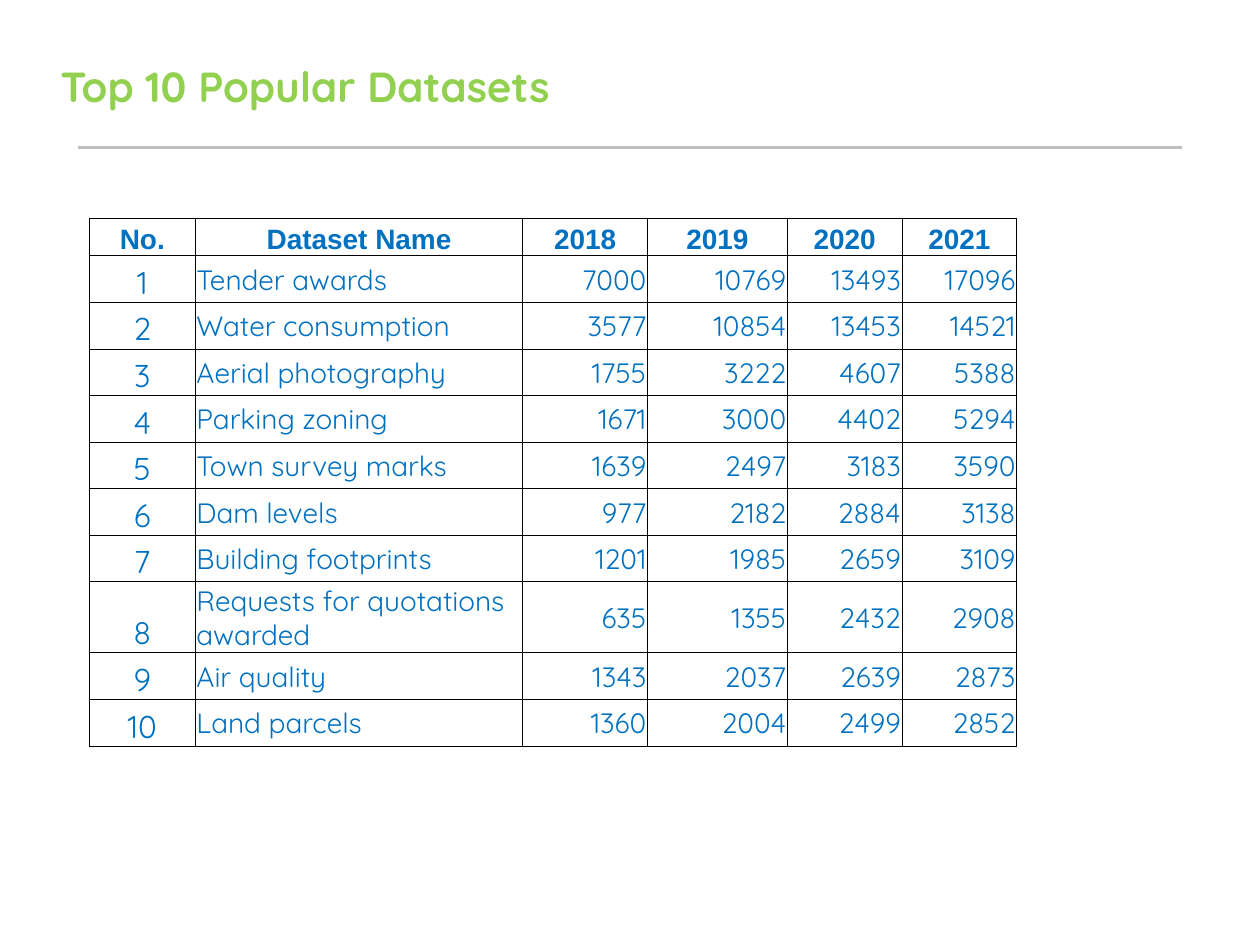
from lxml import etree
from pptx import Presentation
from pptx import util as u
from pptx.dml.color import RGBColor
from pptx.enum import shapes, text
from pptx.oxml import ns

HEAD = ["No.", "Dataset Name", "2018", "2019", "2020", "2021"]
DATA = [
    ("Tender awards", 7000, 10769, 13493, 17096),
    ("Water consumption", 3577, 10854, 13453, 14521),
    ("Aerial photography", 1755, 3222, 4607, 5388),
    ("Parking zoning", 1671, 3000, 4402, 5294),
    ("Town survey marks", 1639, 2497, 3183, 3590),
    ("Dam levels", 977, 2182, 2884, 3138),
    ("Building footprints", 1201, 1985, 2659, 3109),
    ("Requests for quotations awarded", 635, 1355, 2432, 2908),
    ("Air quality", 1343, 2037, 2639, 2873),
    ("Land parcels", 1360, 2004, 2499, 2852),
]
WIDTHS = [0.84, 2.6, 0.99, 1.11, 0.91, 0.91]
LEFT, CENTER, RIGHT = (
    text.PP_ALIGN.LEFT, text.PP_ALIGN.CENTER, text.PP_ALIGN.RIGHT)
MIDDLE, BOTTOM = text.MSO_ANCHOR.MIDDLE, text.MSO_ANCHOR.BOTTOM


def color(code):
    return RGBColor.from_string(code)


def write(frame, words, size=16, font="Quicksand", ink="0070C0",
          bold=False, align=LEFT):
    para = frame.paragraphs[0]
    para.alignment = align
    run = para.add_run()
    run.text = words
    run.font.size = u.Pt(size)
    run.font.name = font
    run.font.bold = bold
    run.font.color.rgb = color(ink)


def border(cell, ink="000000", width=0.5):
    props = cell._tc.get_or_add_tcPr()
    for side in ("a:lnL", "a:lnR", "a:lnT", "a:lnB"):
        line = etree.SubElement(props, ns.qn(side), w=str(u.Pt(width)))
        fill = etree.SubElement(line, ns.qn("a:solidFill"))
        etree.SubElement(fill, ns.qn("a:srgbClr"), val=ink)


class Deck:
    def __init__(self):
        self.file = Presentation()
        self.file.slide_width = u.Inches(10)
        self.file.slide_height = u.Inches(7.5)
        self.slide = self.file.slides.add_slide(self.file.slide_layouts[5])

    def title(self, words, x, y, w, h):
        box = self.slide.shapes.title
        box.left, box.top, box.width, box.height = map(
            u.Inches, (x, y, w, h))
        box.text_frame.vertical_anchor = MIDDLE
        write(box.text_frame, words, size=24, ink="92D050", bold=True)

    def rule(self, x, y, end, ink="BFBFBF", width=2):
        line = self.slide.shapes.add_connector(
            shapes.MSO_CONNECTOR.STRAIGHT, *map(u.Inches, (x, y, end, y)))
        line.line.color.rgb = color(ink)
        line.line.width = u.Pt(width)
        etree.SubElement(line._element.spPr, ns.qn("a:effectLst"))

    def cell(self, cell, words, anchor, **style):
        cell.margin_left = cell.margin_right = u.Inches(0.01)
        cell.margin_top, cell.margin_bottom = u.Inches(0.01), 0
        cell.vertical_anchor = anchor
        border(cell)
        cell.fill.solid()
        cell.fill.fore_color.rgb = color("FFFFFF")
        write(cell.text_frame, words, **style)

    def table(self, x, y, head, data, widths, top=0.3, high=0.37):
        size = (sum(widths), top + high * len(data))
        grid = self.slide.shapes.add_table(
            len(data) + 1, len(head), *map(u.Inches, (x, y, *size))).table
        for col, width in zip(grid.columns, widths):
            col.width = u.Inches(width)
        for i, row in enumerate(grid.rows):
            row.height = u.Inches(high if i else top)
        for j, words in enumerate(head):
            self.cell(grid.cell(0, j), words, BOTTOM,
                      font="Arial", bold=True, align=CENTER)
        for i, (name, *counts) in enumerate(data, 1):
            self.cell(grid.cell(i, 0), str(i), BOTTOM, size=18, align=CENTER)
            self.cell(grid.cell(i, 1), name, MIDDLE)
            for j, count in enumerate(counts, 2):
                self.cell(grid.cell(i, j), str(count), MIDDLE, align=RIGHT)


def main():
    deck = Deck()
    deck.rule(0.62, 1.17, 9.38)
    deck.title("Top 10 Popular Datasets", 0.38, 0.3, 9.12, 0.76)
    deck.table(0.71, 1.73, HEAD, DATA, WIDTHS)
    deck.file.save("out.pptx")


if __name__ == "__main__":
    main()
